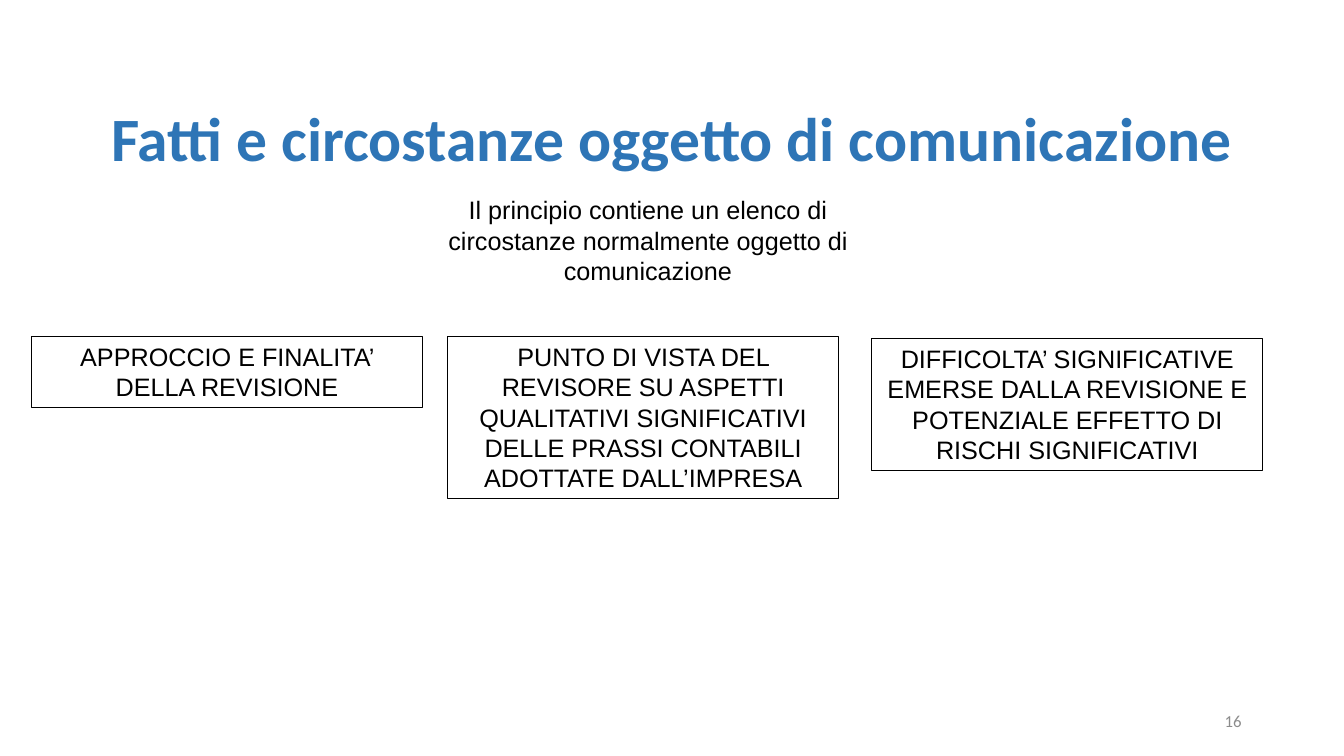
from dataclasses import dataclass

from pptx import Presentation
from pptx import util as u
from pptx.dml.color import RGBColor
from pptx.enum import shapes, text


@dataclass(frozen=True)
class Theme:
    blue: RGBColor = RGBColor(0x2E, 0x75, 0xB6)
    black: RGBColor = RGBColor(0, 0, 0)
    grey: RGBColor = RGBColor(0x8C, 0x8C, 0x8C)
    heading_font: str = "Calibri"
    body_font: str = "Arial"
    title_size: int = 44
    body_size: int = 18
    number_size: int = 12


class SlideBuilder:
    def __init__(self, s, theme):
        self.s = s
        self.theme = theme

    def set_words(self, sp, words, color, align=text.PP_ALIGN.CENTER,
                  anchor=text.MSO_ANCHOR.TOP, spacing=1.0, **font):
        tf = sp.text_frame
        p = tf.paragraphs[0]
        r = p.add_run()
        r.text = words
        formats = (
            (tf, {"word_wrap": True, "vertical_anchor": anchor}),
            (p, {"alignment": align, "line_spacing": spacing}),
            (r.font, font),
        )
        for target, values in formats:
            for name, value in values.items():
                setattr(target, name, value)
        r.font.color.rgb = color

    def label(self, at, words, color, **style):
        sp = self.s.shapes.add_textbox(*map(u.Cm, at))
        self.set_words(sp, words, color, **style)

    def box(self, at, words, **style):
        sp = self.s.shapes.add_shape(shapes.MSO_SHAPE.RECTANGLE, *map(u.Cm, at))
        sp.shadow.inherit = False
        sp.fill.background()
        sp.line.color.rgb = self.theme.black
        sp.line.width = u.Pt(0.75)
        self.set_words(sp, words, self.theme.black, **style)


def main():
    prs = Presentation()
    prs.slide_width, prs.slide_height = u.Cm(33.87), u.Cm(19.05)
    theme = Theme()
    slide = SlideBuilder(prs.slides.add_slide(prs.slide_layouts[6]), theme)
    body = {"name": theme.body_font, "size": u.Pt(theme.body_size)}
    middle = text.MSO_ANCHOR.MIDDLE

    # Title
    slide.label((2.33, 1.73, 29.21, 3.68),
                "Fatti e circostanze oggetto di comunicazione", theme.blue,
                anchor=middle, spacing=0.9, name=theme.heading_font,
                size=u.Pt(theme.title_size), bold=True)

    # Introduction
    slide.label((10.64, 4.78, 11.38, 2.54),
                "Il principio contiene un elenco di circostanze normalmente "
                "oggetto di comunicazione", theme.black, **body)

    # Topics: left, top, height, wording
    topics = (
        (0.79, 8.48, 1.8, "APPROCCIO E FINALITA’ DELLA REVISIONE"),
        (11.28, 8.48, 4.09,
         "PUNTO DI VISTA DEL REVISORE SU ASPETTI QUALITATIVI SIGNIFICATIVI "
         "DELLE PRASSI CONTABILI ADOTTATE DALL’IMPRESA"),
        (21.97, 8.53, 3.33,
         "DIFFICOLTA’ SIGNIFICATIVE EMERSE DALLA REVISIONE E POTENZIALE "
         "EFFETTO DI RISCHI SIGNIFICATIVI"),
    )
    for left, top, height, words in topics:
        slide.box((left, top, 9.86, height), words, **body)

    # Slide number
    slide.label((23.92, 17.65, 7.62, 1.02), "16", theme.grey,
                align=text.PP_ALIGN.RIGHT, anchor=middle,
                name=theme.heading_font, size=u.Pt(theme.number_size))

    prs.save("out.pptx")


if __name__ == "__main__":
    main()
